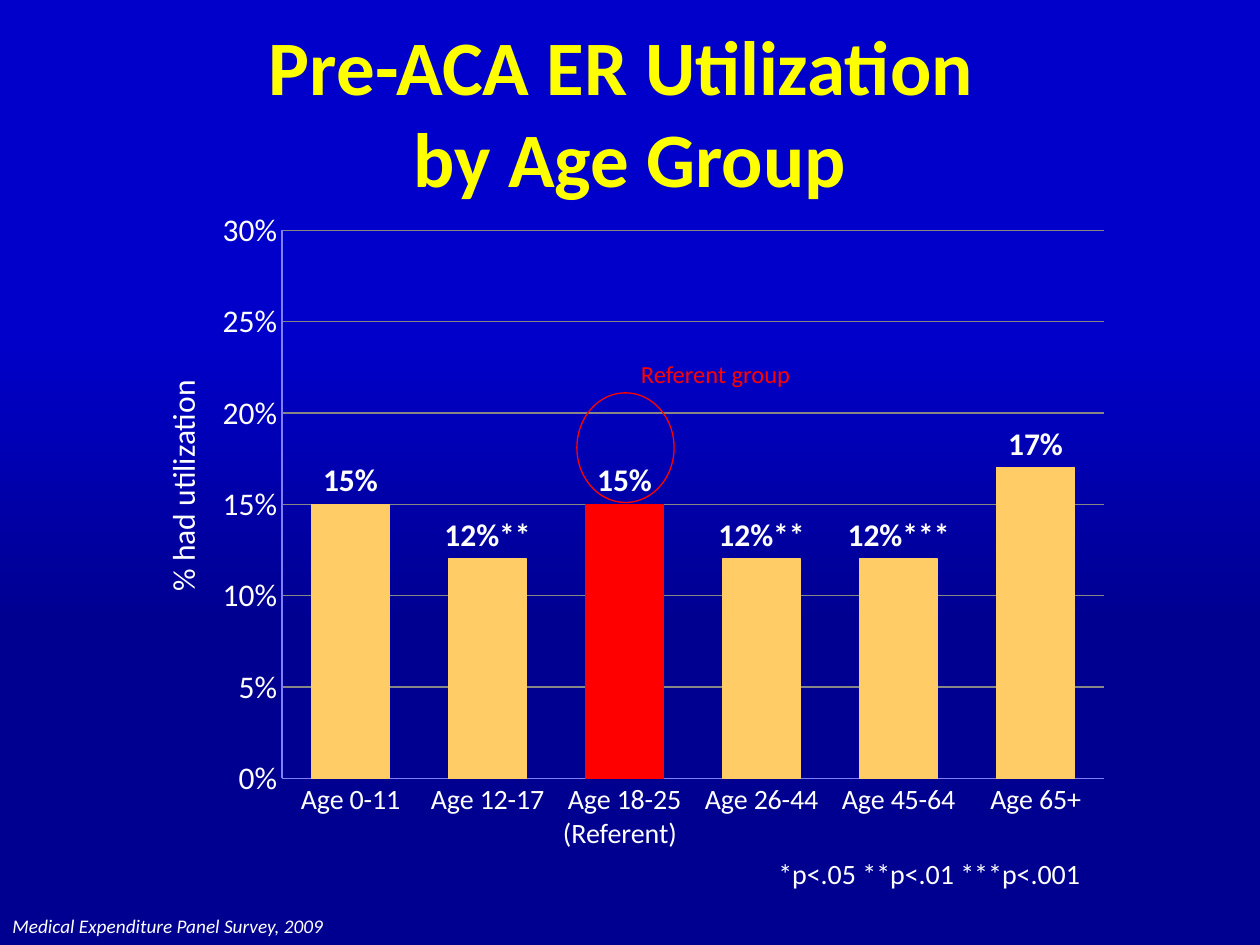
"""Build a slide with a column chart of emergency room use by age group."""
from dataclasses import dataclass

from lxml import etree
from pptx import Presentation
from pptx.chart.data import CategoryChartData
from pptx.dml.color import RGBColor
from pptx.enum.chart import XL_CHART_TYPE, XL_LABEL_POSITION, XL_TICK_MARK
from pptx.enum.shapes import MSO_SHAPE
from pptx.enum.text import MSO_ANCHOR, MSO_AUTO_SIZE, PP_ALIGN
from pptx.oxml.ns import qn
from pptx.util import Cm, Pt


@dataclass(frozen=True)
class Theme:
    font: str = "Calibri"
    title: str = "FFFF00"
    text: str = "FFFFFF"
    accent: str = "FF0000"
    bar: str = "FFCC66"
    grid: str = "868686"
    axis: str = "7F7FFF"
    background: tuple = ((0.34, "000090"), (0.65, "0000CB"))
    title_size: int = 44
    chart_size: int = 18
    note_size: int = 16
    callout_size: int = 14
    source_size: int = 11
    hairline: float = 0.75


THEME = Theme()
TITLE = "Pre-ACA ER Utilization \vby Age Group"
TITLE_BOX = (1.27, 0.64, 22.86, 3.18)
CHART_BOX = (4.01, 4.01, 18.62, 12.7)
PLOT = {"x": 0.09, "y": 0.05, "w": 0.89, "h": 0.87}
RING_BOX = (11.63, 7.92, 1.96, 2.21)
REFERENT = 2
AGE_GROUPS = [
    ("Age 0-11", 0.15, ""),
    ("Age 12-17", 0.12, "**"),
    ("Age 18-25", 0.15, ""),
    ("Age 26-44", 0.12, "**"),
    ("Age 45-64", 0.12, "***"),
    ("Age 65+", 0.17, ""),
]
NOTES = [
    ("(Referent)", (11.1, 16.31, 3.07, 0.94), THEME.note_size, THEME.text, 0, False),
    ("*p<.05 **p<.01 ***p<.001", (15.44, 17.15, 6.81, 0.94), THEME.note_size, THEME.text, 0, False),
    ("% had utilization", (1.09, 9.07, 5.18, 1.02), THEME.chart_size, THEME.text, 270, False),
    ("Medical Expenditure Panel Survey, 2009", (0, 18.31, 6.83, 0.74), THEME.source_size, THEME.text, 0, True),
    ("Referent group", (12.67, 7.11, 3.84, 0.86), THEME.callout_size, THEME.accent, 0, False),
]


def rgb(value):
    return RGBColor.from_string(value)


def box(lengths):
    return [Cm(length) for length in lengths]


def style(font, size, color, bold=False, italic=False):
    font.name, font.size, font.bold, font.italic = THEME.font, Pt(size), bold, italic
    font.color.rgb = rgb(color)


def set_line(line, color):
    line.color.rgb = rgb(color)
    line.width = Pt(THEME.hairline)


def fill_background(slide):
    fill = slide.background.fill
    fill.gradient()
    fill.gradient_angle = 90
    for stop, (position, color) in zip(fill.gradient_stops, THEME.background):
        stop.position = position
        stop.color.rgb = rgb(color)


def add_title(slide):
    sp = slide.shapes.title
    sp.left, sp.top, sp.width, sp.height = box(TITLE_BOX)
    tf = sp.text_frame
    tf.text = TITLE
    tf.vertical_anchor = MSO_ANCHOR.MIDDLE
    p = tf.paragraphs[0]
    p.alignment = PP_ALIGN.CENTER
    style(p.font, THEME.title_size, THEME.title, bold=True)


def place_plot(chart):
    area = chart.plots[0]._element.getparent()
    for old in area.findall(qn("c:layout")):
        area.remove(old)
    layout = etree.Element(qn("c:layout"))
    area.insert(0, layout)
    manual = etree.SubElement(layout, qn("c:manualLayout"))
    settings = [("layoutTarget", "inner"), ("xMode", "edge"), ("yMode", "edge"), *PLOT.items()]
    for tag, value in settings:
        etree.SubElement(manual, qn(f"c:{tag}")).set("val", str(value))


def format_axes(chart):
    for axis, size in ((chart.category_axis, THEME.note_size), (chart.value_axis, THEME.chart_size)):
        axis.major_tick_mark = axis.minor_tick_mark = XL_TICK_MARK.NONE
        style(axis.tick_labels.font, size, THEME.text)
        set_line(axis.format.line, THEME.axis)
    axis = chart.value_axis
    axis.minimum_scale, axis.maximum_scale, axis.major_unit = 0, 0.3, 0.05
    axis.tick_labels.number_format = "0%"
    axis.tick_labels.number_format_is_linked = False
    axis.has_major_gridlines = True
    set_line(axis.major_gridlines.format.line, THEME.grid)


def format_bars(plot):
    plot.gap_width = 75
    plot.vary_by_categories = False
    series = plot.series[0]
    series.format.fill.solid()
    series.format.fill.fore_color.rgb = rgb(THEME.bar)
    set_line(series.format.line, THEME.bar)
    referent = series.points[REFERENT].format
    referent.fill.solid()
    referent.fill.fore_color.rgb = rgb(THEME.accent)
    set_line(referent.line, THEME.accent)

    labels = series.data_labels
    labels.show_value = True
    labels.number_format, labels.number_format_is_linked = "0%", False
    labels.position = XL_LABEL_POSITION.OUTSIDE_END
    style(labels.font, THEME.chart_size, THEME.text, bold=True)
    for i, (_, value, stars) in enumerate(AGE_GROUPS):
        if stars:
            label = series.points[i].data_label
            p = label.text_frame.paragraphs[0]
            r = p.add_run()
            r.text = f"{value:.0%}{stars}"
            style(r.font, THEME.chart_size, THEME.text, bold=True)
            label.position = XL_LABEL_POSITION.OUTSIDE_END


def add_age_chart(slide):
    data = CategoryChartData(number_format="0%")
    data.categories = [name for name, _, _ in AGE_GROUPS]
    data.add_series("Series 1", [value for _, value, _ in AGE_GROUPS])
    chart = slide.shapes.add_chart(XL_CHART_TYPE.COLUMN_CLUSTERED, *box(CHART_BOX), data).chart
    chart.has_legend = chart.has_title = False
    style(chart.font, THEME.chart_size, THEME.text)
    place_plot(chart)
    format_axes(chart)
    format_bars(chart.plots[0])


def add_note(slide, text, lengths, size, color, rotation, italic):
    sp = slide.shapes.add_textbox(*box(lengths))
    sp.rotation = rotation
    tf = sp.text_frame
    tf.word_wrap = False
    tf.auto_size = MSO_AUTO_SIZE.SHAPE_TO_FIT_TEXT
    p = tf.paragraphs[0]
    p.text = text
    style(p.font, size, color, italic=italic)


def add_ring(slide):
    sp = slide.shapes.add_shape(MSO_SHAPE.OVAL, *box(RING_BOX))
    sp.shadow.inherit = False
    sp.fill.background()
    set_line(sp.line, THEME.accent)


def main():
    prs = Presentation()
    prs.slide_width, prs.slide_height = Cm(25.4), Cm(19.05)
    slide = prs.slides.add_slide(prs.slide_layouts[5])
    fill_background(slide)
    add_title(slide)
    add_age_chart(slide)
    for note in NOTES:
        add_note(slide, *note)
    add_ring(slide)
    prs.save("out.pptx")


if __name__ == "__main__":
    main()
